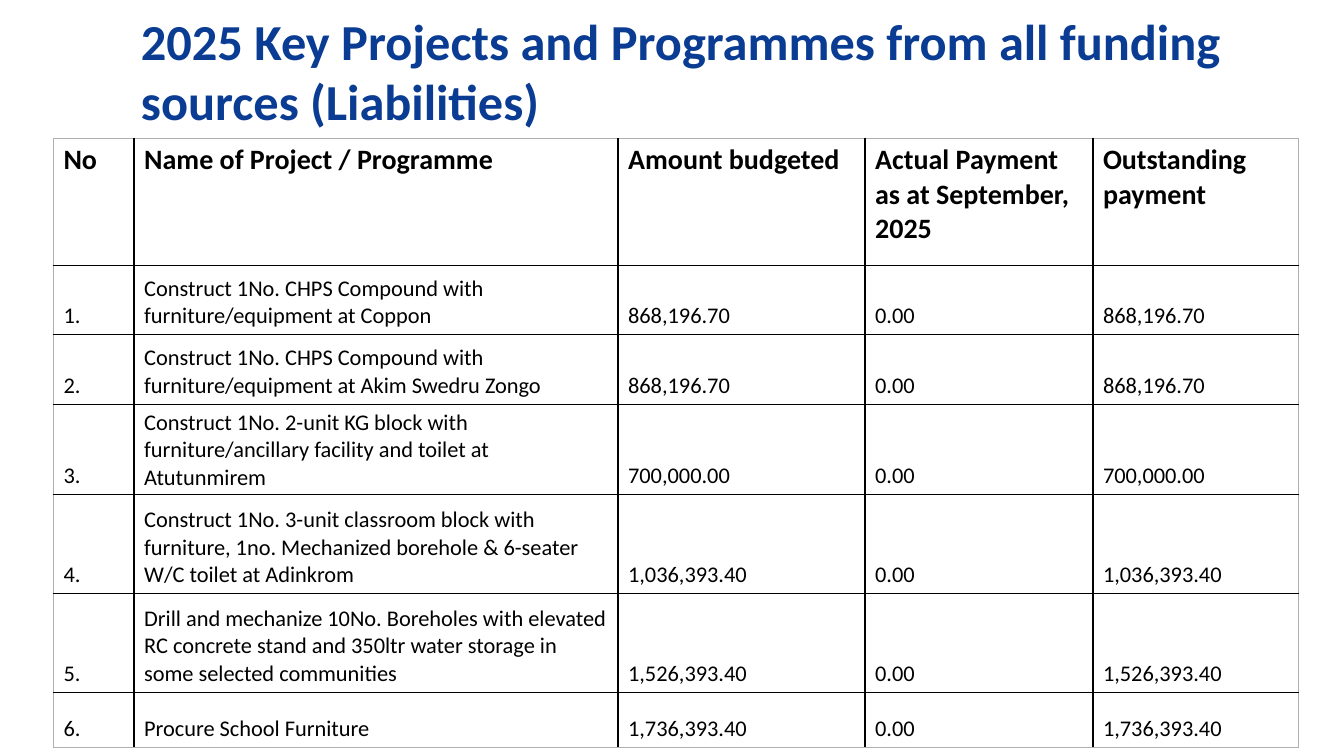
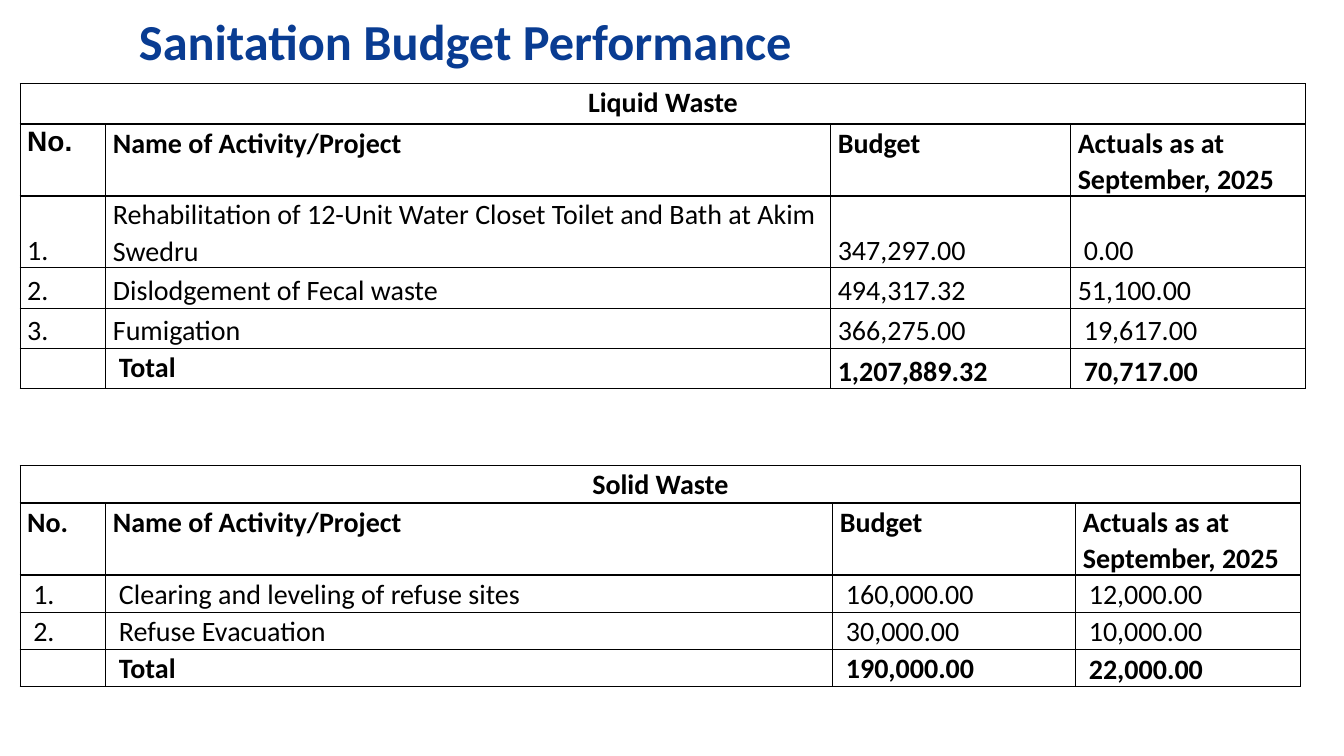
from lxml.etree import SubElement
from pptx import Presentation
from pptx.dml.color import RGBColor
from pptx.enum.text import MSO_ANCHOR, PP_ALIGN
from pptx.oxml.ns import qn
from pptx.util import Inches, Pt

SLIDE_W, SLIDE_H = 13.33, 7.5
FONT = "Calibri"
BLUE = RGBColor(0x09, 0x3C, 0x92)
BLACK = RGBColor(0x00, 0x00, 0x00)
GREY = RGBColor(0xB0, 0xB0, 0xB0)
INDENT = 0.06

PROJECT_HEADER = ["No", "Name of Project / Programme", "Amount budgeted",
                  "Actual Payment as at September, 2025", "Outstanding\npayment"]
PROJECTS = [
    ("Construct 1No. CHPS Compound with furniture/equipment at Coppon", "868,196.70"),
    ("Construct 1No. CHPS Compound with furniture/equipment at Akim Swedru Zongo", "868,196.70"),
    ("Construct 1No. 2-unit KG block with furniture/ancillary facility and toilet at Atutunmirem",
     "700,000.00"),
    ("Construct 1No. 3-unit classroom block with furniture, 1no. Mechanized borehole & 6-seater "
     "W/C toilet at Adinkrom", "1,036,393.40"),
    ("Drill and mechanize 10No. Boreholes with elevated RC concrete stand and 350ltr water storage "
     "in some selected communities", "1,526,393.40"),
    ("Procure School Furniture", "1,736,393.40"),
]

WASTE_HEADER = ["No.", "Name of Activity/Project", "Budget", "Actuals as at September, 2025"]
LIQUID_WASTE = [
    ["1.", "Rehabilitation of 12-Unit Water Closet Toilet and Bath at Akim Swedru",
     "347,297.00", "0.00"],
    ["2.", "Dislodgement of Fecal waste", "494,317.32", "51,100.00"],
    ["3.", "Fumigation", "366,275.00", "19,617.00"],
    ["", "Total", "1,207,889.32", "70,717.00"],
]
SOLID_WASTE = [
    ["1.", "Clearing and leveling of refuse sites", "160,000.00", "12,000.00"],
    ["2.", "Refuse Evacuation", "30,000.00", "10,000.00"],
    ["", "Total", "190,000.00", "22,000.00"],
]


def add_run(p, text, size, bold, color=BLACK, font=FONT):
    r = p.add_run()
    r.text = text
    r.font.name = font
    r.font.size = Pt(size)
    r.font.bold = bold
    r.font.color.rgb = color


def add_title(s, text, left, width, height):
    tf = s.shapes.add_textbox(Inches(left), 0, Inches(width), Inches(height)).text_frame
    tf.word_wrap = True
    tf.margin_left = tf.margin_right = tf.margin_top = tf.margin_bottom = Inches(0.1)
    add_run(tf.paragraphs[0], text, 36, True, BLUE)


def set_borders(cell, colors):
    """Draw 1 pt borders; colors run left, right, top, bottom."""
    tc_pr = cell._tc.get_or_add_tcPr()
    for i, (side, color) in enumerate(zip("LRTB", colors)):
        ln = SubElement(tc_pr, qn(f"a:ln{side}"), w=str(Pt(1)))
        SubElement(SubElement(ln, qn("a:solidFill")), qn("a:srgbClr"), val=str(color))
        tc_pr.insert(i, ln)


def add_grid(s, left, top, cols, rows, outer=BLACK):
    """Add an unfilled table with black inner lines and an outer frame."""
    last_row, last_col = len(rows) - 1, len(cols) - 1
    frame = s.shapes.add_table(len(rows), len(cols), Inches(left), Inches(top),
                               Inches(sum(cols)), Inches(sum(rows)))
    table = frame.table
    table.first_row = table.horz_banding = False
    for column, width in zip(table.columns, cols):
        column.width = Inches(width)
    for r, height in enumerate(rows):
        table.rows[r].height = Inches(height)
        for c in range(len(cols)):
            cell = table.cell(r, c)
            cell.fill.background()
            edges = (c == 0, c == last_col, r == 0, r == last_row)
            set_borders(cell, [outer if edge else BLACK for edge in edges])
    return table


def fill_cell(cell, text, size, bold=False, bottom=False, font=FONT, spacing=None, align=None):
    cell.vertical_anchor = MSO_ANCHOR.BOTTOM if bottom else MSO_ANCHOR.TOP
    tf = cell.text_frame
    for i, line in enumerate(text.split("\n")):
        p = tf.add_paragraph() if i else tf.paragraphs[0]
        p.line_spacing = spacing
        p.alignment = align
        if line:
            add_run(p, line, size, bold, font=font)


def add_project_table(s):
    table = add_grid(s, 0.53, 1.37, [0.8, 4.8, 2.45, 2.26, 2.04],
                     [1.26, 0.69, 0.69, 0.76, 0.98, 0.98, 0.55], outer=GREY)
    for c, text in enumerate(PROJECT_HEADER):
        fill_cell(table.cell(0, c), text, 20, bold=True)
    for r, (name, amount) in enumerate(PROJECTS, 1):
        for c, text in enumerate([f"{r}.", name, amount, "0.00", amount]):
            fill_cell(table.cell(r, c), text, 16, bottom=True)


def add_waste_table(s, top, cols, rows, heading, body, indented, bottom_from, number_font=FONT):
    """indented holds (row, column) of body cells; columns from bottom_from sit low."""
    table = add_grid(s, 0.2, top, cols, rows)
    for r in range(len(rows)):
        for c in range(len(cols)):
            cell = table.cell(r, c)
            cell.margin_left = Inches(0.07 + INDENT * ((r - 2, c) in indented))
            cell.margin_right = Inches(0.07)
            cell.margin_top = cell.margin_bottom = 0
    table.cell(0, 0).merge(table.cell(0, len(cols) - 1))
    fill_cell(table.cell(0, 0), heading, 20, bold=True, spacing=1.07, align=PP_ALIGN.CENTER)
    for c, text in enumerate(WASTE_HEADER):
        fill_cell(table.cell(1, c), text, 20, bold=True, spacing=1.07,
                  font=FONT if c else number_font)
    for r, values in enumerate(body, 2):
        for c, text in enumerate(values):
            fill_cell(table.cell(r, c), text, 20, bold="Total" in values, spacing=1.07,
                      bottom=c >= bottom_from and text != "Total")


def main():
    prs = Presentation()
    prs.slide_width, prs.slide_height = Inches(SLIDE_W), Inches(SLIDE_H)
    blank = prs.slide_layouts[6]

    s = prs.slides.add_slide(blank)
    add_title(s, "2025 Key Projects and Programmes from all funding sources (Liabilities)",
              1.3, 11.4, 1.21)
    add_project_table(s)

    s = prs.slides.add_slide(blank)
    add_title(s, "Sanitation Budget Performance", 1.28, 8.52, 0.69)
    add_waste_table(s, 0.83, [0.85, 7.19, 2.38, 2.33], [0.4, 0.4, 0.65, 0.4, 0.4, 0.4],
                    "Liquid Waste", LIQUID_WASTE, {(0, 3), (2, 3), (3, 1), (3, 3)},
                    bottom_from=0, number_font="Arial")
    all_cells = {(r, c) for r in range(len(SOLID_WASTE)) for c in range(len(WASTE_HEADER))}
    add_waste_table(s, 4.62, [0.85, 7.21, 2.41, 2.23], [0.37] * 5,
                    "Solid Waste", SOLID_WASTE, all_cells, bottom_from=3)

    prs.save("out.pptx")


if __name__ == "__main__":
    main()
